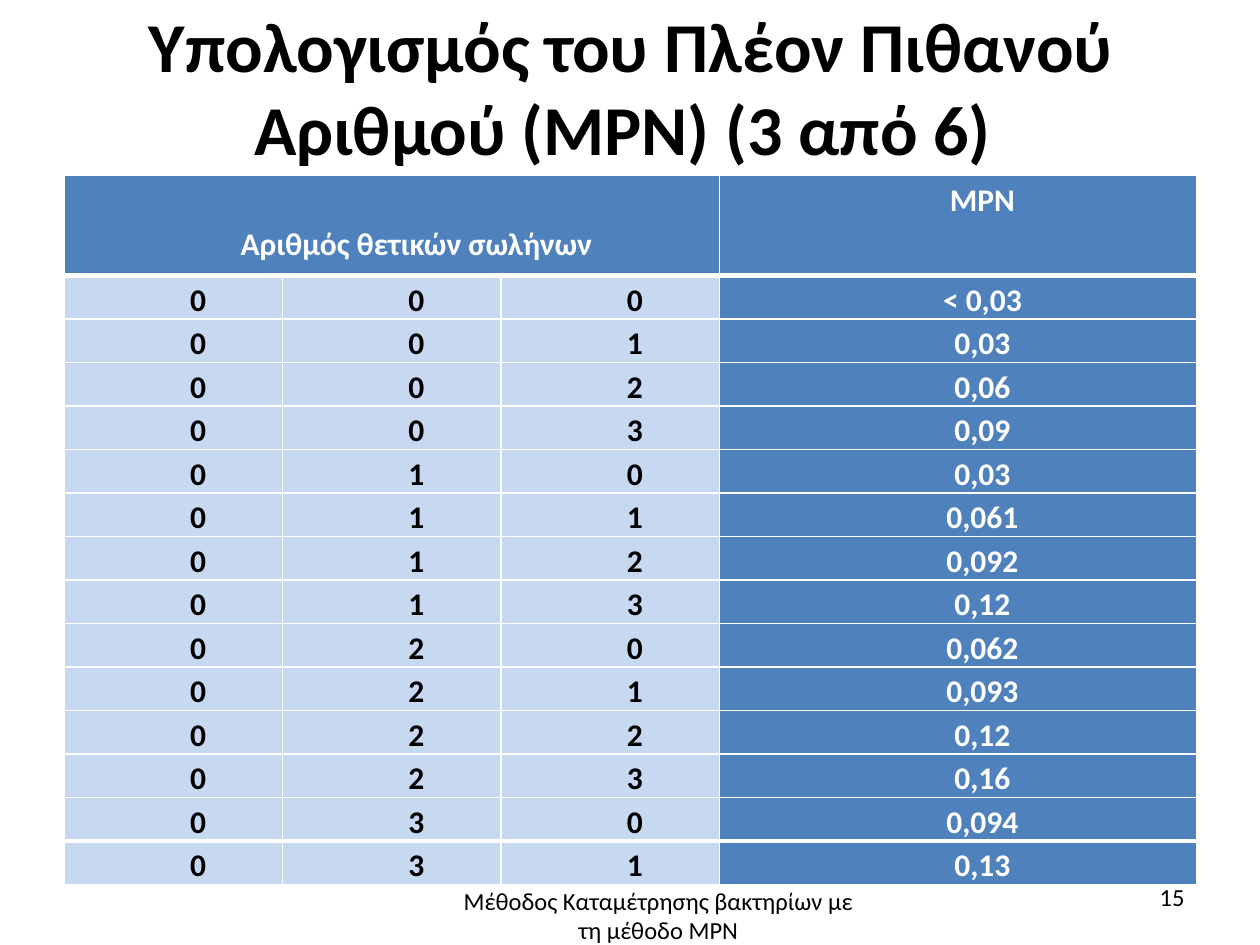
from lxml.etree import SubElement
from pptx import Presentation
from pptx.dml.color import RGBColor
from pptx.enum.text import MSO_ANCHOR as ANCHOR, PP_ALIGN as ALIGN
from pptx.oxml import parse_xml
from pptx.oxml.ns import nsdecls, qn
from pptx.util import Pt

BLACK = RGBColor(0x00, 0x00, 0x00)
WHITE = RGBColor(0xFF, 0xFF, 0xFF)
BLUE = RGBColor(0x4F, 0x81, 0xBD)
PALE = RGBColor(0xC6, 0xD9, 0xF1)

# MPN for each count of positive tubes
RESULTS = [
    ("000", "< 0,03"), ("001", "0,03"), ("002", "0,06"), ("003", "0,09"),
    ("010", "0,03"), ("011", "0,061"), ("012", "0,092"), ("013", "0,12"),
    ("020", "0,062"), ("021", "0,093"), ("022", "0,12"), ("023", "0,16"),
    ("030", "0,094"), ("031", "0,13"),
]


class SlideBuilder:
    font = "Calibri"
    indent = Pt(28.08)

    def __init__(self, s):
        self.s = s

    def paragraph(self, tf, text, align, spacing=None, **fmt):
        p = tf.paragraphs[0]
        p.alignment = align
        p.line_spacing = spacing
        r = p.add_run()
        r.text = text
        color = fmt.pop("color", BLACK)
        for name, value in {"name": self.font, **fmt}.items():
            setattr(r.font, name, value)
        r.font.color.rgb = color
        return p

    def text(self, box, text, align, spacing=None, frame=None, **fmt):
        sp = self.s.shapes.add_textbox(*map(Pt, box))
        tf = sp.text_frame
        tf.word_wrap = True
        for name, value in (frame or {}).items():
            setattr(tf, name, value)
        self.paragraph(tf, text, align, spacing, **fmt)

    def borders(self, cell, top, bottom):
        tc_pr = cell._tc.get_or_add_tcPr()
        widths = {"lnL": 1, "lnR": 1, "lnT": top, "lnB": bottom}
        for i, (tag, width) in enumerate(widths.items()):
            ln = parse_xml(f'<a:{tag} {nsdecls("a")} w="{Pt(width)}"/>')
            fill = SubElement(ln, qn("a:solidFill"))
            SubElement(fill, qn("a:srgbClr")).set("val", str(WHITE))
            tc_pr.insert(i, ln)

    def cell(self, cell, text, fill, color, top, bottom, margin_top=0):
        margins = {"margin_left": 6.5, "margin_right": 6.5,
                   "margin_top": margin_top, "margin_bottom": 0}
        for name, value in margins.items():
            setattr(cell, name, Pt(value))
        cell.fill.solid()
        cell.fill.fore_color.rgb = fill
        self.borders(cell, top, bottom)
        if text:
            p = self.paragraph(cell.text_frame, text, ALIGN.CENTER, 1.15,
                               size=Pt(18), bold=True, color=color)
            p._p.get_or_add_pPr().set("indent", str(self.indent))

    def table(self, box, widths, heights, header, results):
        shape = self.s.shapes.add_table(len(heights), len(widths),
                                        *map(Pt, box))
        tbl = shape.table
        for col, width in zip(tbl.columns, widths):
            col.width = Pt(width)
        for row, height in zip(tbl.rows, heights):
            row.height = Pt(height)
        # Header, with the first title on its second line
        tbl.cell(0, 0).merge(tbl.cell(0, 2))
        for c, text in enumerate(header):
            self.cell(tbl.cell(0, c), text, BLUE, WHITE, 1, 3,
                      margin_top=25.3 if c == 0 else 0)
        # Body, with thick rules under the header and above the last row
        last = len(results)
        for i, (tubes, mpn) in enumerate(results, 1):
            top = 3 if i in (1, last) else 1
            bottom = 3 if i == last - 1 else 1
            for c, text in enumerate([*tubes, mpn]):
                fill, color = (PALE, BLACK) if c < 3 else (BLUE, WHITE)
                self.cell(tbl.cell(i, c), text, fill, color, top, bottom)


def main():
    prs = Presentation()
    prs.slide_width, prs.slide_height = Pt(720), Pt(540)
    b = SlideBuilder(prs.slides.add_slide(prs.slide_layouts[6]))

    # Title
    b.text((36.7, 6.5, 647.3, 87.8),
           "Υπολογισμός του Πλέον Πιθανού Αριθμού (MPN) (3 από 6) ",
           ALIGN.CENTER, 0.98,
           frame={"margin_left": 0, "margin_top": Pt(1.44),
                  "margin_right": 0, "margin_bottom": 0,
                  "vertical_anchor": ANCHOR.MIDDLE},
           size=Pt(40), bold=True)

    # MPN table
    b.table((36.7, 100.3, 647.3, 405.4), [124.8] * 3 + [272.6],
            [57.2] + [23.04] * len(RESULTS),
            ["Αριθμός θετικών σωλήνων", "", "", "MPN"], RESULTS)

    # Footer and slide number
    b.text((250.6, 502.6, 251.3, 39.6),
           "Μέθοδος Καταμέτρησης βακτηρίων με τη μέθοδο ΜΡΝ",
           ALIGN.CENTER, size=Pt(14))
    b.text((516.2, 500.4, 167.8, 28.8), "15", ALIGN.RIGHT, size=Pt(14))

    prs.save("out.pptx")


if __name__ == "__main__":
    main()
